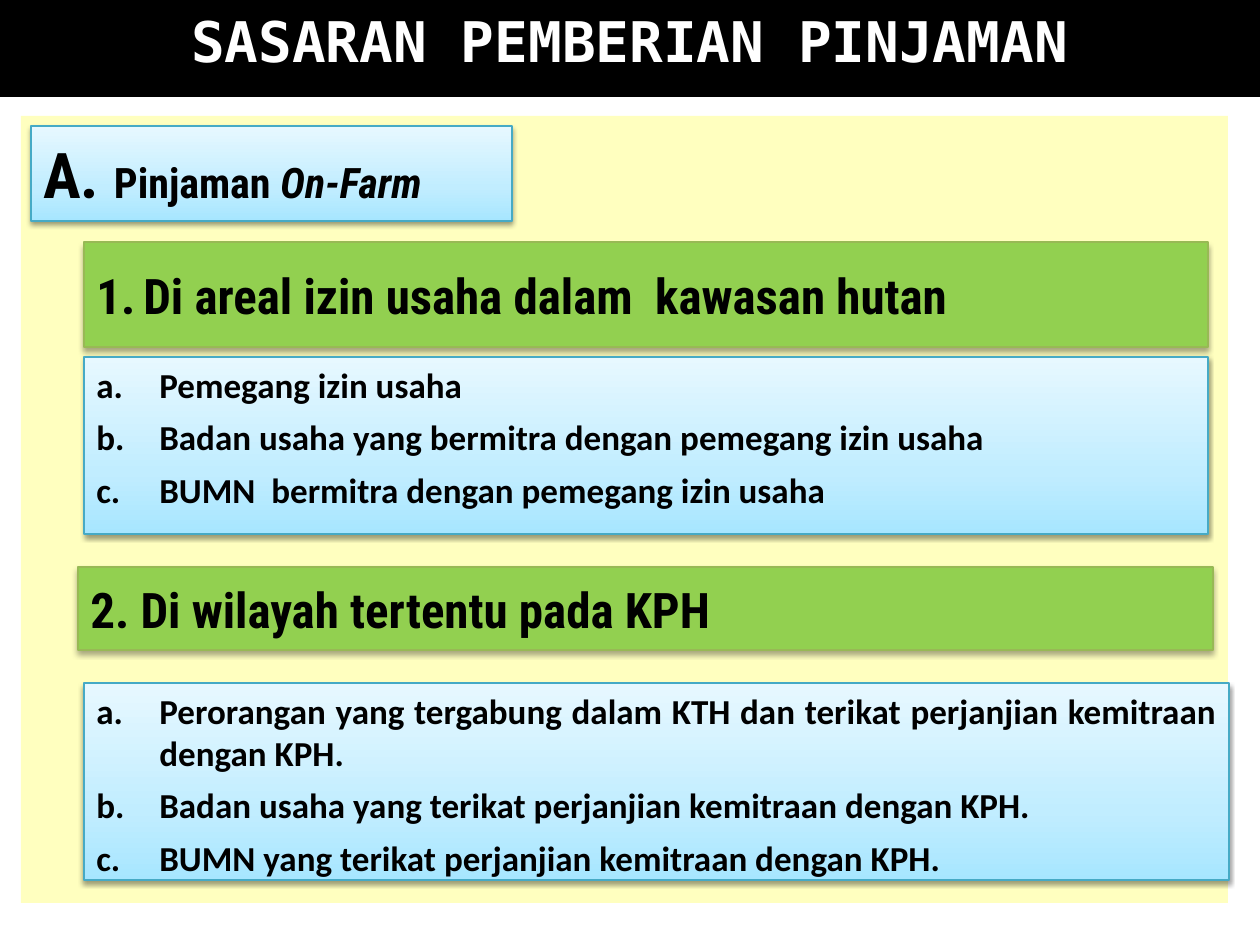
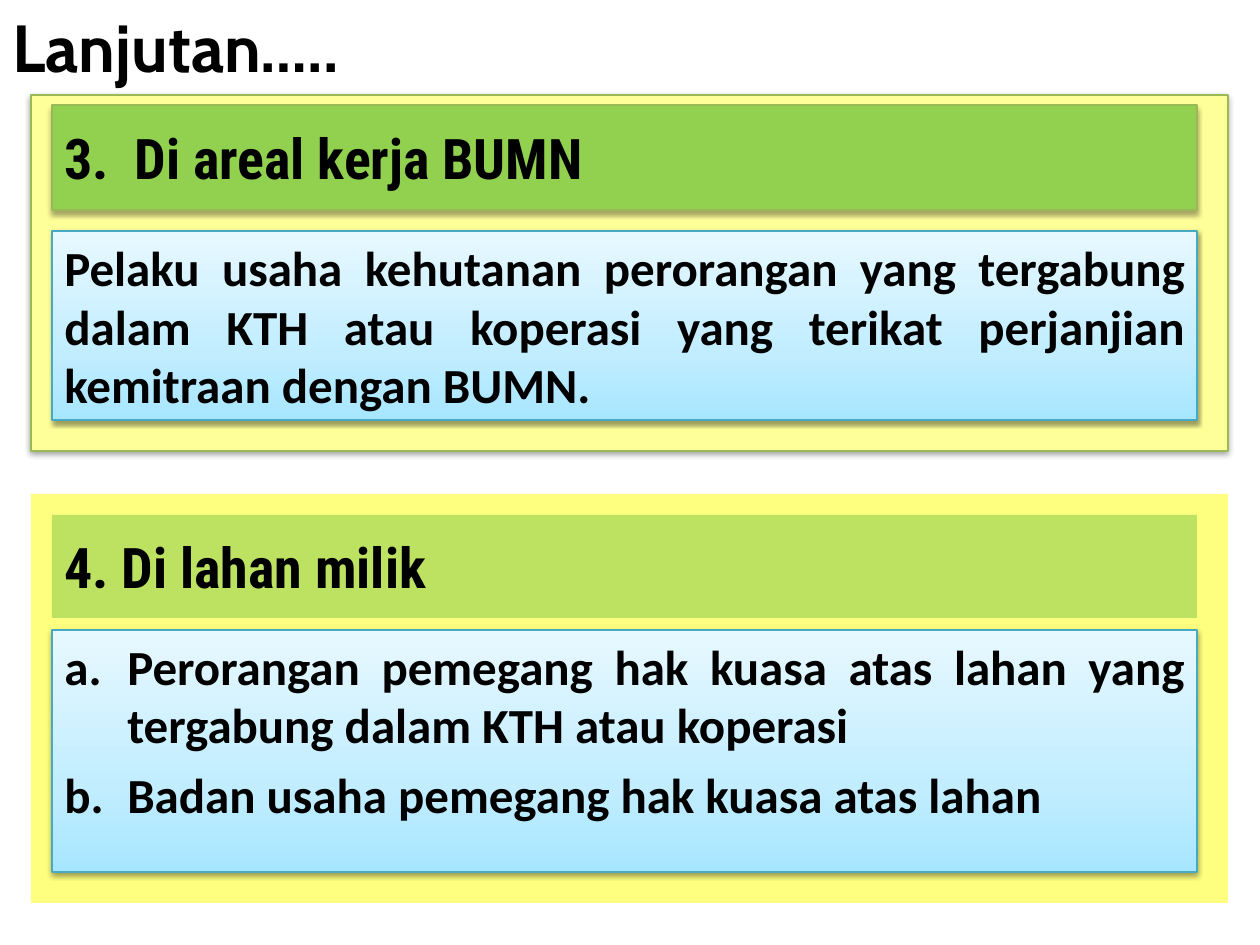
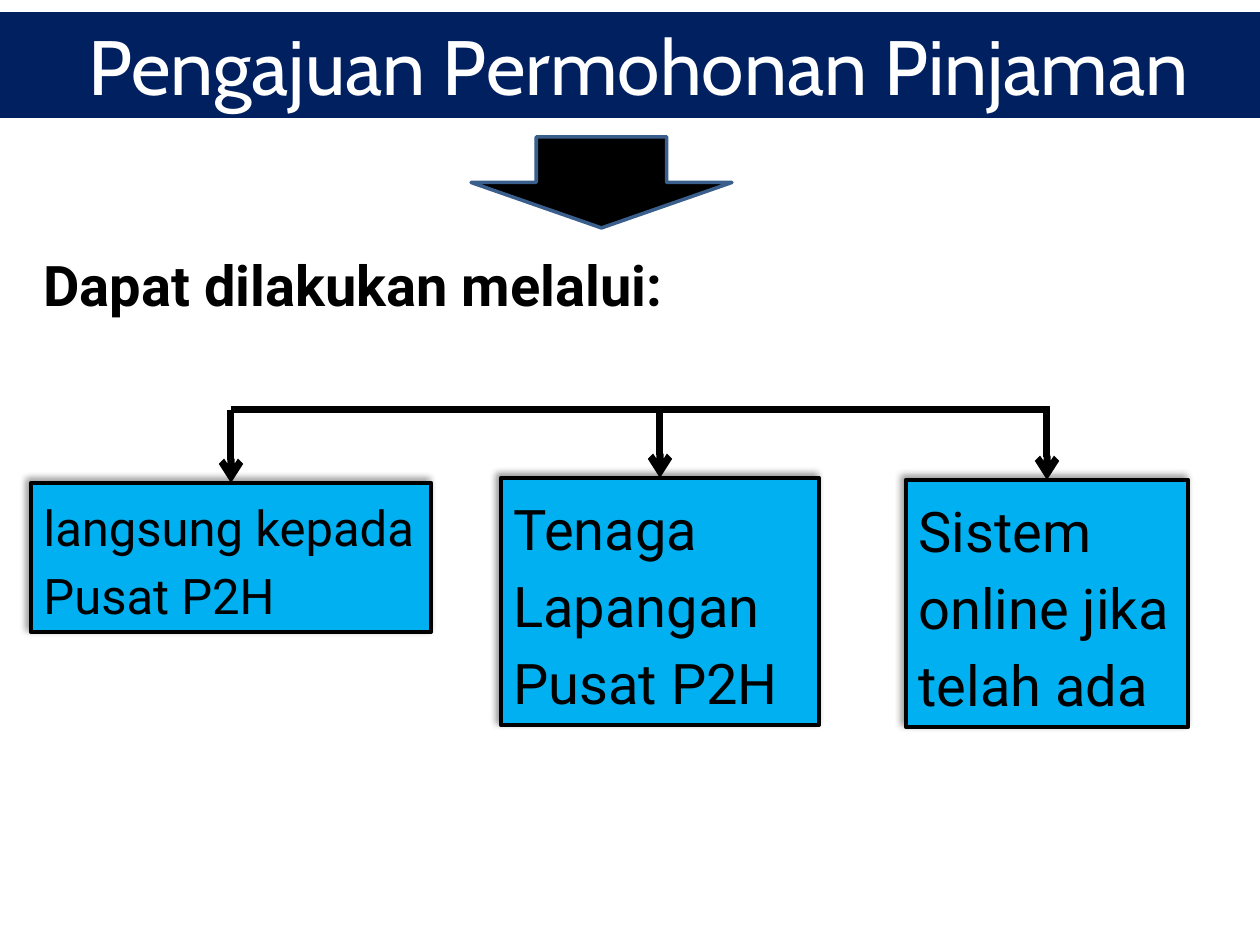
from copy import deepcopy

from lxml.etree import SubElement
from pptx import Presentation
from pptx.dml.color import RGBColor
from pptx.enum.shapes import MSO_CONNECTOR, MSO_SHAPE
from pptx.enum.text import MSO_ANCHOR, MSO_AUTO_SIZE, PP_ALIGN
from pptx.oxml.ns import qn
from pptx.util import Emu, Pt

PX_PER_INCH = 126
BLACK, WHITE = "000000", "FFFFFF"
GREEN, GREEN_LINE = "92D050", "98B955"
SKY, SKY_LINE = ((0, "A7E6FF"), (0.35, "C1EDFF"), (1, "E7F8FF")), "46AAC5"
CREAM, YELLOW, NAVY, BLUE, ARROW_LINE = "FFFF99", "FFFF00", "002060", "00B0F0", "3A5F8C"
HEADING, BODY = "Roboto Condensed", "Calibri"
HEADING_SHADOW = (35, 3.1, 1.8, 90)
PANEL_SHADOW = (38, 3.1, 1.6, 90)
OPTION_SHADOW = (40, 4, 3, 225)


def px(n):
    """Turn pixels into EMU."""
    return Emu(round(n * 914400 / PX_PER_INCH))


def rgb(value):
    """Turn a hex string into a colour."""
    return RGBColor.from_string(value)


def add_alpha(parent, percent):
    """Give the colour inside parent an opacity in percent."""
    color = parent.find(".//" + qn("a:srgbClr"))
    SubElement(color, qn("a:alpha")).set("val", str(percent * 1000))


def add_shadow(sp, opacity, blur, distance, angle):
    """Give a shape an outer shadow."""
    effects = sp._element.spPr.find(qn("a:effectLst"))
    shadow = SubElement(effects, qn("a:outerShdw"), blurRad=str(Pt(blur)),
                        dist=str(Pt(distance)), dir=str(angle * 60000), rotWithShape="0")
    SubElement(shadow, qn("a:srgbClr")).set("val", BLACK)
    add_alpha(shadow, opacity)


def fill_gradient(sp, stops):
    """Fill a shape with a three-stop gradient that rises from the bottom."""
    sp.fill.gradient()
    sp.fill.gradient_angle = 90
    stop_list = sp._element.spPr.find(".//" + qn("a:gsLst"))
    stop_list.insert(1, deepcopy(stop_list[0]))
    for stop, (position, color) in zip(sp.fill.gradient_stops, stops):
        stop.position = position
        stop.color.rgb = rgb(color)


def add_box(s, box, fill, line=None, width=0.75, shadow=None, alpha=None,
            kind=MSO_SHAPE.RECTANGLE):
    """Add a preset shape with a plain or gradient fill."""
    sp = s.shapes.add_shape(kind, *map(px, box))
    sp.shadow.inherit = False
    if isinstance(fill, str):
        sp.fill.solid()
        sp.fill.fore_color.rgb = rgb(fill)
    else:
        fill_gradient(sp, fill)
    if alpha:
        add_alpha(sp._element.spPr, alpha)
    if line:
        sp.line.color.rgb = rgb(line)
        sp.line.width = Pt(width)
    else:
        sp.line.fill.background()
    if shadow:
        add_shadow(sp, *shadow)
    return sp


def format_run(r, font, size, color=BLACK, bold=True):
    """Set the font of a run."""
    r.font.name, r.font.size, r.font.bold = font, Pt(size), bold
    r.font.color.rgb = rgb(color)


def write(sp, lines, font, size, color=BLACK, bold=True, align=PP_ALIGN.LEFT,
          anchor=MSO_ANCHOR.TOP, spacing=None, after=0):
    """Write one paragraph for each line in a shape."""
    tf = sp.text_frame
    tf.word_wrap = True
    tf.vertical_anchor = anchor
    tf.text = "\n".join(lines)
    for p in tf.paragraphs:
        p.alignment = align
        p.space_after = Pt(after)
        if spacing:
            p.line_spacing = spacing
        for r in p.runs:
            format_run(r, font, size, color, bold)


def number(sp, scheme, indent):
    """Number the paragraphs of a shape with a hanging indent."""
    for p in sp.text_frame.paragraphs:
        props = p._p.get_or_add_pPr()
        props.set("marL", str(px(indent)))
        props.set("indent", str(-px(indent)))
        SubElement(props, qn("a:buFont")).set("typeface", "+mj-lt")
        SubElement(props, qn("a:buAutoNum")).set("type", scheme)


def add_title(s, box, fill, text, font, size, color, bold=True, align=PP_ALIGN.CENTER):
    """Add a title band across the slide."""
    write(add_box(s, box, fill), [text], font, size, color, bold, align)


def add_heading(s, box, text, size, flat=False):
    """Add a green section heading."""
    if flat:
        sp = add_box(s, box, GREEN, alpha=60)
    else:
        sp = add_box(s, box, GREEN, GREEN_LINE, shadow=HEADING_SHADOW)
    write(sp, [text], HEADING, size, anchor=MSO_ANCHOR.MIDDLE)
    return sp


def add_panel(s, box):
    """Add an empty sky-blue panel."""
    return add_box(s, box, SKY, SKY_LINE, shadow=PANEL_SHADOW)


def add_body(s, box, lines, size, lettered=True):
    """Add a sky-blue panel with justified text."""
    sp = add_panel(s, box)
    write(sp, lines, BODY, size, align=PP_ALIGN.JUSTIFY, after=6 if lettered else 0)
    if lettered:
        number(sp, "alphaLcPeriod", 63)


def add_label(s, box, parts):
    """Add a sky-blue label from runs of text, size and italic."""
    sp = add_panel(s, box)
    sp.text_frame.vertical_anchor = MSO_ANCHOR.MIDDLE
    p = sp.text_frame.paragraphs[0]
    p.alignment = PP_ALIGN.LEFT
    for text, size, italic in parts:
        r = p.add_run()
        r.text = text
        format_run(r, HEADING, size)
        r.font.italic = italic


def add_line(s, start, end, target=None):
    """Add a thick line, or an arrow joined to the top of a target."""
    line = s.shapes.add_connector(MSO_CONNECTOR.STRAIGHT, *map(px, start + end))
    line.line.color.rgb = rgb(BLACK)
    line.line.width = Pt(4)
    SubElement(line._element.spPr, qn("a:effectLst"))
    if target:
        line.end_connect(target, 0)
        SubElement(line.line._get_or_add_ln(), qn("a:tailEnd")).set("type", "arrow")


def add_option(s, box, text, size, bar_y):
    """Add an option box and the arrow that drops to it from the bar."""
    sp = add_box(s, box, BLUE, BLACK, 2.5, OPTION_SHADOW)
    write(sp, [text], "Roboto", size, bold=False, spacing=1.15)
    sp.text_frame.auto_size = MSO_AUTO_SIZE.SHAPE_TO_FIT_TEXT
    left, top, width, _ = box
    center = left + width / 2
    add_line(s, (center, bar_y), (center, top), sp)


def build_targets(s):
    """Build the slide on loan targets."""
    add_box(s, (21, 116, 1207, 787), CREAM, alpha=62)
    add_title(s, (0, 0, 1260, 97), BLACK, "SASARAN PEMBERIAN PINJAMAN",
              "DejaVu Sans Mono", 32, WHITE)
    first = add_heading(s, (84, 242, 1124, 105), "Di areal izin usaha dalam  kawasan hutan", 28)
    number(first, "arabicPeriod", 47)
    add_body(s, (84, 357, 1124, 177), [
        "Pemegang izin usaha",
        "Badan usaha yang bermitra dengan pemegang izin usaha",
        "BUMN  bermitra dengan pemegang izin usaha"], 20)
    add_heading(s, (78, 567, 1135, 83), "2. Di wilayah tertentu pada KPH", 28)
    add_body(s, (84, 683, 1145, 197), [
        "Perorangan yang tergabung dalam KTH dan terikat perjanjian kemitraan dengan KPH.",
        "Badan usaha yang terikat perjanjian kemitraan dengan KPH.",
        "BUMN yang terikat perjanjian kemitraan dengan KPH."], 20)
    add_label(s, (31, 126, 481, 95),
              [("A. ", 36, False), ("Pinjaman ", 24, False), ("On-Farm", 24, True)])


def build_continued(s):
    """Build the slide that continues the targets."""
    add_box(s, (31, 95, 1197, 356), CREAM, GREEN_LINE, shadow=PANEL_SHADOW)
    add_title(s, (0, 0, 1260, 84), WHITE, "Lanjutan…..", "Cabin", 38, BLACK,
              align=PP_ALIGN.LEFT)
    add_heading(s, (52, 105, 1145, 105), "3.  Di areal kerja BUMN", 32)
    add_body(s, (52, 231, 1145, 189), [
        "Pelaku usaha kehutanan perorangan yang tergabung dalam KTH atau koperasi "
        "yang terikat perjanjian kemitraan dengan BUMN."], 28, lettered=False)
    add_box(s, (31, 494, 1197, 409), YELLOW, alpha=50)
    add_heading(s, (52, 515, 1145, 103), "4. Di lahan milik", 32, flat=True)
    add_body(s, (52, 630, 1145, 242), [
        "Perorangan pemegang hak kuasa atas lahan yang tergabung dalam KTH atau koperasi",
        "Badan usaha pemegang hak kuasa atas lahan"], 28)


def build_application(s):
    """Build the slide on applying for a loan."""
    intro = s.shapes.add_textbox(*map(px, (31, 234, 1166, 91)))
    write(intro, ["Dapat dilakukan melalui:"], "Roboto", 32,
          align=PP_ALIGN.JUSTIFY, spacing=1.15)
    add_title(s, (0, 12, 1260, 106), NAVY, " Pengajuan Permohonan Pinjaman",
              "Cabin", 44, WHITE, bold=False)
    add_box(s, (471, 137, 261, 91), BLACK, ARROW_LINE, 2, kind=MSO_SHAPE.DOWN_ARROW)
    bar_y = 410
    add_line(s, (231, bar_y), (1050, bar_y))
    for box, text, size in (
            ((31, 483, 400, 149), "langsung kepada Pusat P2H", 28),
            ((501, 478, 318, 247), "Tenaga Lapangan Pusat P2H", 32),
            ((906, 480, 282, 247), "Sistem online jika telah ada", 32)):
        add_option(s, box, text, size, bar_y)


def main():
    """Build and save the presentation."""
    prs = Presentation()
    prs.slide_width, prs.slide_height = px(1260), px(945)
    for build in (build_targets, build_continued, build_application):
        build(prs.slides.add_slide(prs.slide_layouts[6]))
    prs.save("out.pptx")


if __name__ == "__main__":
    main()
